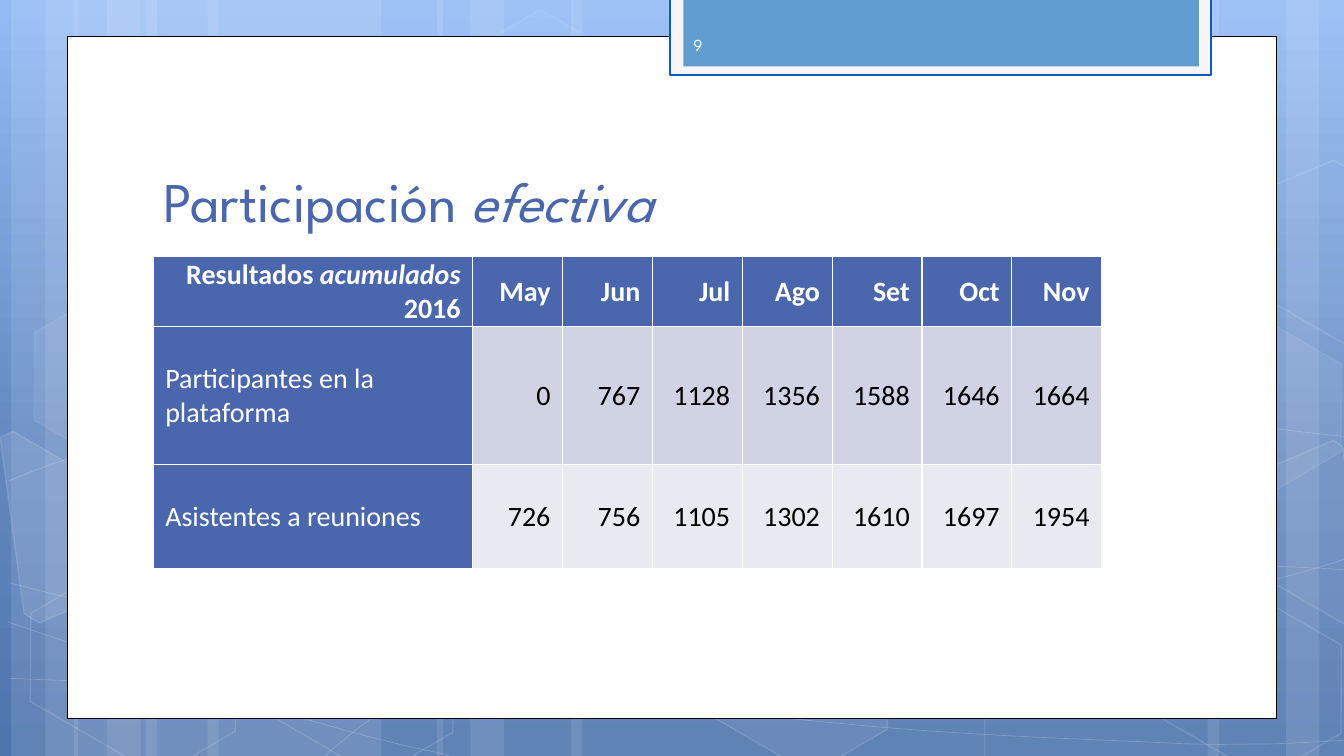
from lxml.etree import SubElement
from pptx import Presentation
from pptx.dml.color import RGBColor
from pptx.enum.shapes import MSO_SHAPE as Shape
from pptx.enum.text import MSO_ANCHOR as Anchor, PP_ALIGN as Align
from pptx.oxml import parse_xml
from pptx.oxml.ns import nsdecls, qn
from pptx.util import Emu, Inches, Pt

COLUMNS, ROWS = 40, 22.5          # grid of square cells
CELL = Inches(40 / 3) / COLUMNS
BLUE, WHITE, BLACK = "4A66AC", "FFFFFF", "000000"
HEADING, BODY = "League Spartan", "Calibri"

# Backdrop: (left, width) of the vertical stripes
STRIPES = [(4.35, 7), (0.33, 2), (1.35, 3.33), (6.18, 7), (2.19, 2), (3.18, 3.33),
           (29.28, 7), (38.28, 2), (35.94, 3.33), (17, 12.33), (13, 2), (14, 3.33)]

# Each curve is a start point, then three points per Bézier segment
CURVES = [
    [(0.27, 20.19), (2.46, 20.28), (4.62, 20.37), (7.62, 20.34), (10.62, 20.31),
     (14.31, 20.25), (18.3, 19.95), (22.32, 19.65), (27.99, 19.08), (31.68, 18.51),
     (35.34, 17.94), (39.09, 17.04), (40.29, 16.53)],
    [(0.27, 14.31), (1.44, 13.83), (2.58, 13.38), (4.86, 12.93), (7.14, 12.48),
     (10.35, 11.82), (13.89, 11.61), (17.46, 11.4), (21.75, 11.37), (26.16, 11.61),
     (30.57, 11.85), (37.89, 12.78), (40.29, 13.02)],
    [(0.24, 18.51), (5.07, 20.16), (9.9, 21.81), (13.38, 22.47)],
    [(0.27, 17.34), (1.53, 17.67), (2.79, 18), (5.13, 18.48), (7.44, 18.93),
     (10.92, 19.68), (14.25, 20.19), (17.61, 20.7), (21.81, 21.24), (25.11, 21.54),
     (28.44, 21.87), (32.01, 21.99), (34.11, 22.08), (36.21, 22.2), (36.78, 22.14),
     (37.8, 22.14), (38.82, 22.11), (39.57, 22.05), (40.29, 22.02)],
    [(9.69, 22.47), (10.41, 21.87), (11.1, 21.27), (12.09, 20.73), (13.05, 20.16),
     (14.4, 19.59), (15.51, 19.17), (16.62, 18.75), (17.31, 18.57), (18.78, 18.27),
     (20.25, 17.97), (22.95, 17.55), (24.33, 17.34), (25.74, 17.13), (25.95, 17.13),
     (27.21, 17.07), (28.44, 16.98), (30.39, 16.89), (31.77, 16.86), (33.15, 16.83),
     (35.46, 16.86), (35.46, 16.86), (36.34, 16.86), (37.22, 16.86), (38.1, 16.86),
     (38.85, 16.89), (39.51, 16.92), (39.87, 16.95), (40.23, 16.98), (40.11, 16.95),
     (40.23, 16.98)],
]

# (left, top, fill opacity, line opacity)
HEXAGONS = [(13.35, 1.08, 4, 8), (19.86, 17.67, 6, 12), (0.45, 17.73, 0, 12),
            (0.57, 9.36, 7, 8), (6.93, 17.76, 0, 12), (33.36, 17.79, 0, 12),
            (33.36, 9.42, 7, 8)]

# Hexagons cut by the slide's edge: (fill opacity, corners)
CUT_HEXAGONS = [
    (10, [(0, 13.02), (0.39, 12.84), (3.45, 14.61), (3.81, 17.43), (1.17, 18.54), (0.72, 18.27)]),
    (4, [(37.05, 14.22), (39.69, 13.11), (39.96, 13.29), (40.71, 18.75), (40.47, 18.84), (37.41, 17.07)]),
    (0, [(37.05, 5.88), (39.69, 4.77), (40.02, 4.95), (40.71, 10.38), (40.47, 10.5), (37.41, 8.73)]),
]

MONTHS = ["May", "Jun", "Jul", "Ago", "Set", "Oct", "Nov"]
RESULTS = [
    ("Participantes en la plataforma", [0, 767, 1128, 1356, 1588, 1646, 1664], "D0D3E3"),
    ("Asistentes a reuniones", [726, 756, 1105, 1302, 1610, 1697, 1954], "E9EAF1"),
]
LABEL_WIDTH, TABLE_WIDTH = 9.51, 28.23


def grid(cells):
    return Emu(round(cells * CELL))


def color(hex_text):
    return RGBColor.from_string(hex_text)


def paint(fill, hex_text, opacity=100):
    """Solid fill with the given opacity in percent; 0 means no fill."""
    if not opacity:
        fill.background()
        return
    fill.solid()
    fill.fore_color.rgb = color(hex_text)
    if opacity < 100:
        tint = fill._xPr.find(qn("a:solidFill")).find(qn("a:srgbClr"))
        SubElement(tint, qn("a:alpha")).set("val", str(opacity * 1000))


def write(frame, text, size=20, font=BODY, ink=BLACK, bold=False, align=Align.LEFT):
    """Fill a text frame; parts between asterisks become italic."""
    frame.word_wrap = True
    paragraph = frame.paragraphs[0]
    paragraph.alignment = align
    for index, part in enumerate(text.split("*")):
        if part:
            run = paragraph.add_run()
            run.text = part
            run.font.size, run.font.name = Pt(size), font
            run.font.bold, run.font.italic = bold, index % 2 == 1
            run.font.color.rgb = color(ink)


class SlideBuilder:
    def __init__(self, presentation):
        self.slide = presentation.slides.add_slide(presentation.slide_layouts[6])
        self.shapes = self.slide.shapes

    def background(self, stops):
        fill = self.slide.background.fill
        fill.gradient()
        gradient = fill._xPr.find(qn("a:gradFill"))
        for child in list(gradient):
            gradient.remove(child)
        stop_list = SubElement(gradient, qn("a:gsLst"))
        for position, hex_text in stops:
            stop = SubElement(stop_list, qn("a:gs"), pos=str(position * 1000))
            SubElement(stop, qn("a:srgbClr"), val=hex_text)
        SubElement(gradient, qn("a:lin"), ang="5400000", scaled="0")

    def finish(self, shape, fill, opacity, line, line_width, line_opacity):
        shape.shadow.inherit = False
        paint(shape.fill, fill, opacity)
        paint(shape.line.fill, line, line_opacity)
        if line_opacity:
            shape.line.width = Pt(line_width)
        return shape

    def box(self, left, top, width, height, kind=Shape.RECTANGLE, fill=WHITE, opacity=100,
            line=WHITE, line_width=1, line_opacity=0):
        shape = self.shapes.add_shape(kind, *map(grid, (left, top, width, height)))
        return self.finish(shape, fill, opacity, line, line_width, line_opacity)

    def outline(self, points, closed, opacity=0, line_width=1, line_opacity=12):
        points = [(grid(x), grid(y)) for x, y in points]
        builder = self.shapes.build_freeform(*points[0], scale=1.0)
        builder.add_line_segments(points[1:], close=closed)
        shape = builder.convert_to_shape()
        return self.finish(shape, WHITE, opacity, WHITE, line_width, line_opacity)

    def curve(self, points, **style):
        """Outline whose points, three by three, become Bézier segments."""
        shape = self.outline(points, False, **style)
        lines = list(shape._element.iter(qn("a:lnTo")))
        for first in range(0, len(lines), 3):
            segment = SubElement(lines[first].getparent(), qn("a:cubicBezTo"))
            for line in lines[first:first + 3]:
                line.getparent().remove(line)
                segment.append(line[0])

    def text(self, left, top, width, height, text, anchor, **style):
        frame = self.shapes.add_textbox(*map(grid, (left, top, width, height))).text_frame
        frame.vertical_anchor = anchor
        write(frame, text, **style)

    def cell(self, cell, text, fill, **style):
        cell.margin_left = cell.margin_right = Inches(0.12)
        cell.margin_top, cell.margin_bottom = Inches(0.01), 0
        cell.vertical_anchor = Anchor.MIDDLE
        for side in "LRTB":
            cell._tc.get_or_add_tcPr().append(parse_xml(
                f'<a:ln{side} {nsdecls("a")} w="12700"><a:solidFill>'
                f'<a:srgbClr val="{WHITE}"/></a:solidFill></a:ln{side}>'))
        paint(cell.fill, fill)
        write(cell.text_frame, text, **style)

    def table(self, left, top, widths, heights):
        frame = self.shapes.add_table(len(heights), len(widths), *map(
            grid, (left, top, sum(widths), sum(heights))))
        table = frame.table
        table.first_row = table.horz_banding = False
        for column, width in zip(table.columns, widths):
            column.width = grid(width)
        for row, height in zip(table.rows, heights):
            row.height = grid(height)
        return table


def main():
    presentation = Presentation()
    presentation.slide_width, presentation.slide_height = grid(COLUMNS), grid(ROWS)
    builder = SlideBuilder(presentation)

    # Backdrop
    builder.background([(0, "93BBF6"), (62, "6186BE"), (100, "4F75AE")])
    for left, width in STRIPES:
        builder.box(left, 0, width, ROWS, opacity=10)
    for points in CURVES:
        builder.curve(points, line_width=0.5, line_opacity=20)
    for left, top, opacity, line_opacity in HEXAGONS:
        hexagon = builder.box(left, top, 7.02, 4.56, Shape.HEXAGON,
                              opacity=opacity, line_opacity=line_opacity)
        hexagon.adjustments[0], hexagon.adjustments[1] = 0.285, 1.155
        hexagon.rotation = 30
    for opacity, corners in CUT_HEXAGONS:
        builder.outline(corners, True, opacity=opacity)

    # White panel and tab
    builder.box(2, 1.08, 36, 20.31, line=BLACK, line_width=0.5, line_opacity=100)
    builder.box(19.95, -0.06, 16.09, 2.29, fill="F5F5F5",
                line="0E58C4", line_width=1.25, line_opacity=100)
    builder.box(20.34, -0.06, 15.34, 2.04, fill="629DD1")

    # Title and slide number
    builder.text(4.56, 3.36, 30.72, 3.75, "Participación *efectiva*", Anchor.BOTTOM,
                 size=40, font=HEADING, ink=BLUE)
    builder.text(20.34, 0.72, 5.82, 1.2, "9", Anchor.MIDDLE, size=12, font=HEADING, ink="FEFEFE")

    # Results table
    month_width = (TABLE_WIDTH - LABEL_WIDTH) / len(MONTHS)
    table = builder.table(4.56, 7.63, [LABEL_WIDTH] + [month_width] * len(MONTHS),
                          [2.08, 4.11, 3.1])
    for column, label in enumerate(["Resultados *acumulados *2016"] + MONTHS):
        builder.cell(table.cell(0, column), label, BLUE, ink=WHITE, bold=True, align=Align.RIGHT)
    for row, (label, values, shade) in enumerate(RESULTS, 1):
        builder.cell(table.cell(row, 0), label, BLUE, ink=WHITE)
        for column, value in enumerate(values, 1):
            builder.cell(table.cell(row, column), str(value), shade, align=Align.RIGHT)

    presentation.save("out.pptx")


if __name__ == "__main__":
    main()
